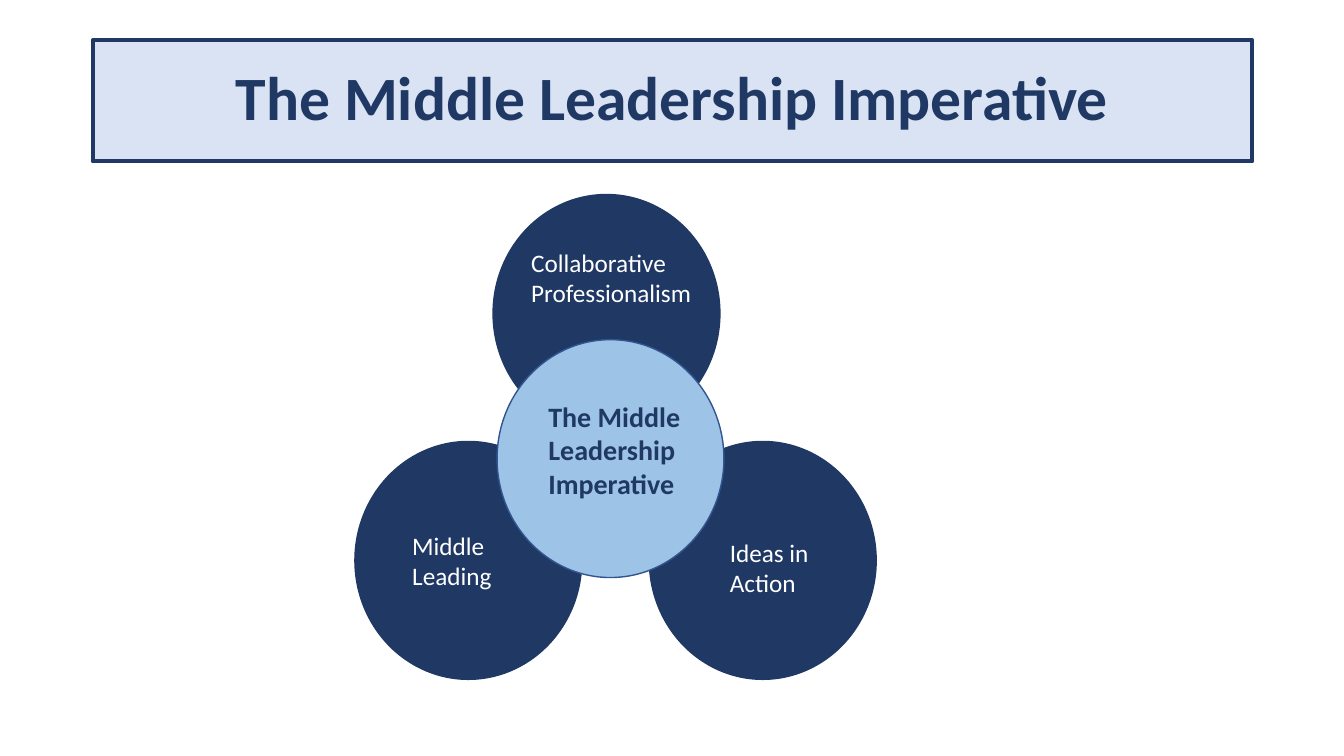
from dataclasses import dataclass

from pptx import Presentation
from pptx.dml.color import RGBColor
from pptx.enum.shapes import MSO_SHAPE
from pptx.enum.text import MSO_ANCHOR, MSO_AUTO_SIZE, PP_ALIGN
from pptx.util import Pt

PX = 9144  # 100 px to the inch
SLIDE_SIZE = (1333, 750)


@dataclass(frozen=True)
class Theme:
    font: str = "Calibri"
    navy: str = "203864"
    pale: str = "DAE3F3"
    sky: str = "9DC3E6"
    edge: str = "325491"
    white: str = "FFFFFF"
    title_size: int = 44
    centre_size: int = 20
    label_size: int = 18


THEME = Theme()

TITLE = "The Middle Leadership Imperative"
TITLE_BOX = (92, 40, 1150, 120)
CIRCLE_SIZE = (225, 236)

# Circle corners from back to front: left, top, fill, line
CIRCLES = [
    (352, 438, THEME.navy, THEME.navy),
    (644, 438, THEME.navy, THEME.navy),
    (489, 193, THEME.navy, THEME.navy),
    (493, 337, THEME.sky, THEME.edge),
]

# Text, box, size, colour, bold
LABELS = [
    (TITLE, (534, 391, 157, 111), THEME.centre_size, THEME.navy, True),
    ("Middle Leading", (399, 521, 140, 71), THEME.label_size, THEME.white, False),
    ("Collaborative Professionalism", (517, 240, 191, 71), THEME.label_size, THEME.white, False),
    ("Ideas in Action", (714, 528, 140, 71), THEME.label_size, THEME.white, False),
]


def emu(lengths):
    return [n * PX for n in lengths]


def paint(shape, fill, line, width):
    shape.fill.solid()
    shape.fill.fore_color.rgb = RGBColor.from_string(fill)
    shape.line.color.rgb = RGBColor.from_string(line)
    shape.line.width = Pt(width)


def write(tf, text, size, color, bold):
    tf.word_wrap = True
    tf.text = text
    p = tf.paragraphs[0]
    font = p.runs[0].font
    font.name, font.size, font.bold = THEME.font, Pt(size), bold
    font.color.rgb = RGBColor.from_string(color)
    return p


def add_title(s):
    title = s.shapes.title
    title.left, title.top, title.width, title.height = emu(TITLE_BOX)
    paint(title, THEME.pale, THEME.navy, 3)
    tf = title.text_frame
    tf.vertical_anchor = MSO_ANCHOR.MIDDLE
    p = write(tf, TITLE, THEME.title_size, THEME.navy, True)
    p.alignment = PP_ALIGN.CENTER
    p.line_spacing = 0.9


def main():
    prs = Presentation()
    prs.slide_width, prs.slide_height = emu(SLIDE_SIZE)
    s = prs.slides.add_slide(prs.slide_layouts.get_by_name("Title Only"))
    add_title(s)

    for left, top, fill, line in CIRCLES:
        sp = s.shapes.add_shape(MSO_SHAPE.FLOWCHART_CONNECTOR, *emu((left, top, *CIRCLE_SIZE)))
        sp.shadow.inherit = False
        paint(sp, fill, line, 1)

    for text, box, size, color, bold in LABELS:
        tf = s.shapes.add_textbox(*emu(box)).text_frame
        write(tf, text, size, color, bold)
        tf.auto_size = MSO_AUTO_SIZE.SHAPE_TO_FIT_TEXT

    prs.save("out.pptx")


if __name__ == "__main__":
    main()
